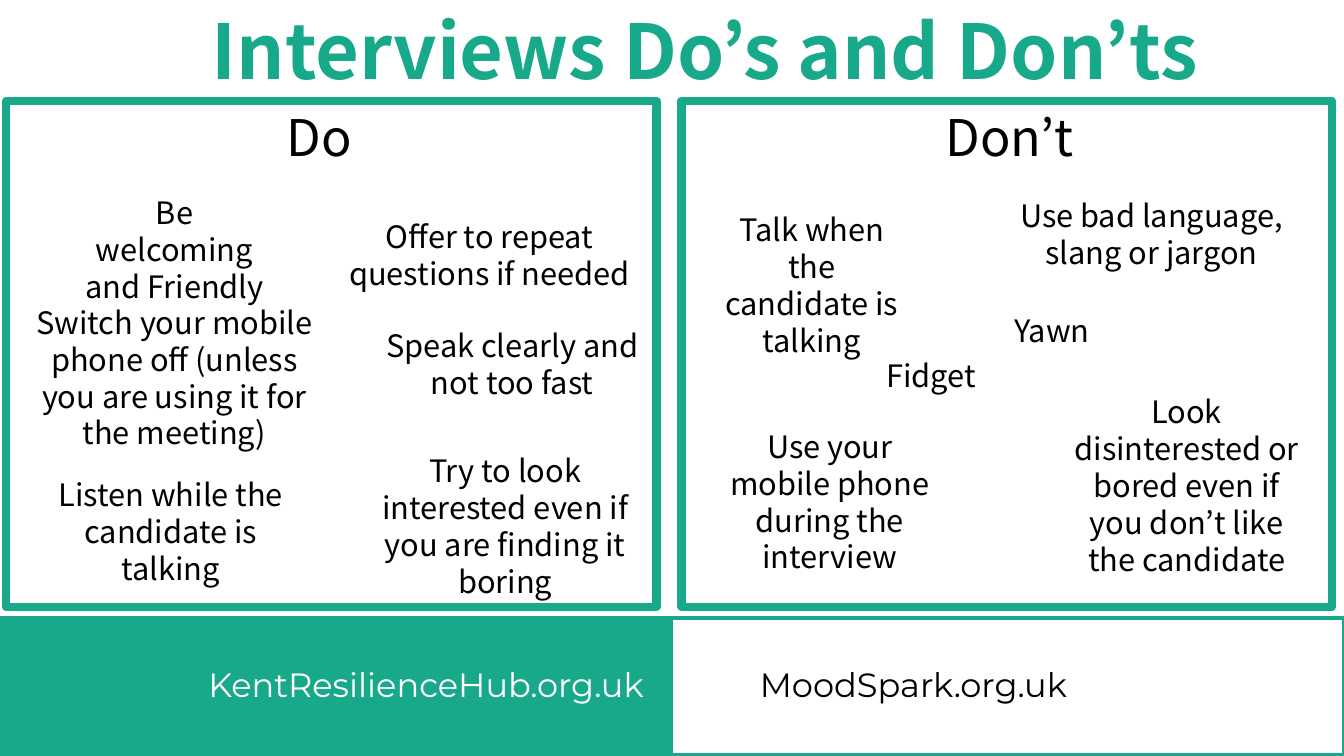
from pptx import Presentation
from pptx.dml.color import RGBColor
from pptx.enum.shapes import MSO_SHAPE
from pptx.enum.text import MSO_ANCHOR, PP_ALIGN
from pptx.util import Inches, Pt

RECT = MSO_SHAPE.RECTANGLE
TOP, BOTTOM = MSO_ANCHOR.TOP, MSO_ANCHOR.BOTTOM
CENTER = PP_ALIGN.CENTER

GREEN, WHITE, BLACK = "18A98A", "FFFFFF", "000000"
BODY_FONT, FOOTER_FONT = "Noto Sans CJK KR", "Montserrat"

PANEL_W, PANEL_H = 6.45, 5.02

# Each tip: text, then left, top, width, height within its panel
DO_TIPS = [
    ("Be welcoming and Friendly", 0.58, 0.87, 2.18, 0.84),
    ("Switch your mobile phone off (unless you are using it for the meeting)",
     0.2, 1.96, 2.94, 1.58),
    ("Listen while the candidate is talking", 0.35, 3.67, 2.57, 1.21),
    ("Offer to repeat questions if needed", 3.2, 1.11, 3.19, 0.84),
    ("Speak clearly and not too fast", 3.55, 2.19, 2.94, 0.84),
    ("Try to look interested even if you are finding it boring",
     3.48, 3.43, 2.94, 1.58),
]
DONT_TIPS = [
    ("Talk when the candidate is talking", 0.23, 1.04, 2.12, 1.21),
    ("Fidget", 1.81, 2.49, 1.33, 0.47),
    ("Use your mobile phone during the interview", 0.35, 3.19, 2.24, 1.58),
    ("Use bad language, slang or jargon", 3.22, 0.9, 2.88, 0.84),
    ("Yawn", 3.19, 2.04, 0.97, 0.47),
    ("Look disinterested or bored even if you don’t like the candidate",
     3.79, 2.85, 2.44, 1.95),
]


def rgb(color):
    return RGBColor.from_string(color)


def add_rect(s, x, y, w, h, line_width, fill=None):
    sp = s.shapes.add_shape(RECT, Inches(x), Inches(y), Inches(w), Inches(h))
    sp.shadow.inherit = False
    if fill:
        sp.fill.solid()
        sp.fill.fore_color.rgb = rgb(fill)
    else:
        sp.fill.background()
    sp.line.color.rgb = rgb(GREEN)
    sp.line.width = Pt(line_width)


def add_text(s, text, x, y, w, h, size=22, color=BLACK, font=BODY_FONT,
             bold=False, anchor=TOP):
    sp = s.shapes.add_textbox(Inches(x), Inches(y), Inches(w), Inches(h))
    tf = sp.text_frame
    tf.word_wrap = True
    tf.vertical_anchor = anchor
    p = tf.paragraphs[0]
    p.text = text
    p.alignment = CENTER
    r = p.runs[0]
    r.font.size = Pt(size)
    r.font.name = font
    r.font.bold = bold
    r.font.color.rgb = rgb(color)
    return p


def add_title(s, x, y, w, h):
    p = add_text(s, "Interviews Do’s and Don’ts", x, y, w, h, size=54,
                 color=GREEN, bold=True, anchor=BOTTOM)
    p.line_spacing = 0.9


def add_panel(s, x, y, heading, heading_x, tips):
    add_rect(s, x, y, PANEL_W, PANEL_H, 6)
    add_text(s, heading, x + heading_x, y, 1.63, 0.71, size=36)
    for text, dx, dy, w, h in tips:
        add_text(s, text, x + dx, y + dy, w, h)


def add_footer(s, x, y, w, h):
    add_rect(s, x, y, w, h, 3)
    add_rect(s, x, y + 0.02, w / 2, h - 0.02, 1, fill=GREEN)
    add_text(s, "KentResilienceHub.org.uk", x + 1.85, y + 0.41, 4.75, 0.5,
             size=24, color=WHITE, font=FOOTER_FONT)
    add_text(s, "MoodSpark.org.uk", x + 6.81, y + 0.41, 4.5, 0.5,
             size=24, font=FOOTER_FONT)


def main():
    prs = Presentation()
    prs.slide_width, prs.slide_height = Inches(13.33), Inches(7.5)
    s = prs.slides.add_slide(prs.slide_layouts[6])

    # Footer band with the two web addresses
    add_footer(s, 0, 6.13, 13.33, 1.36)

    # Title
    add_title(s, 1.99, -0.36, 10, 1.36)

    # Advice panels
    add_panel(s, 0.06, 1, "Do", 2.29, DO_TIPS)
    add_panel(s, 6.76, 1, "Don’t", 2.44, DONT_TIPS)

    prs.save("out.pptx")


if __name__ == "__main__":
    main()
